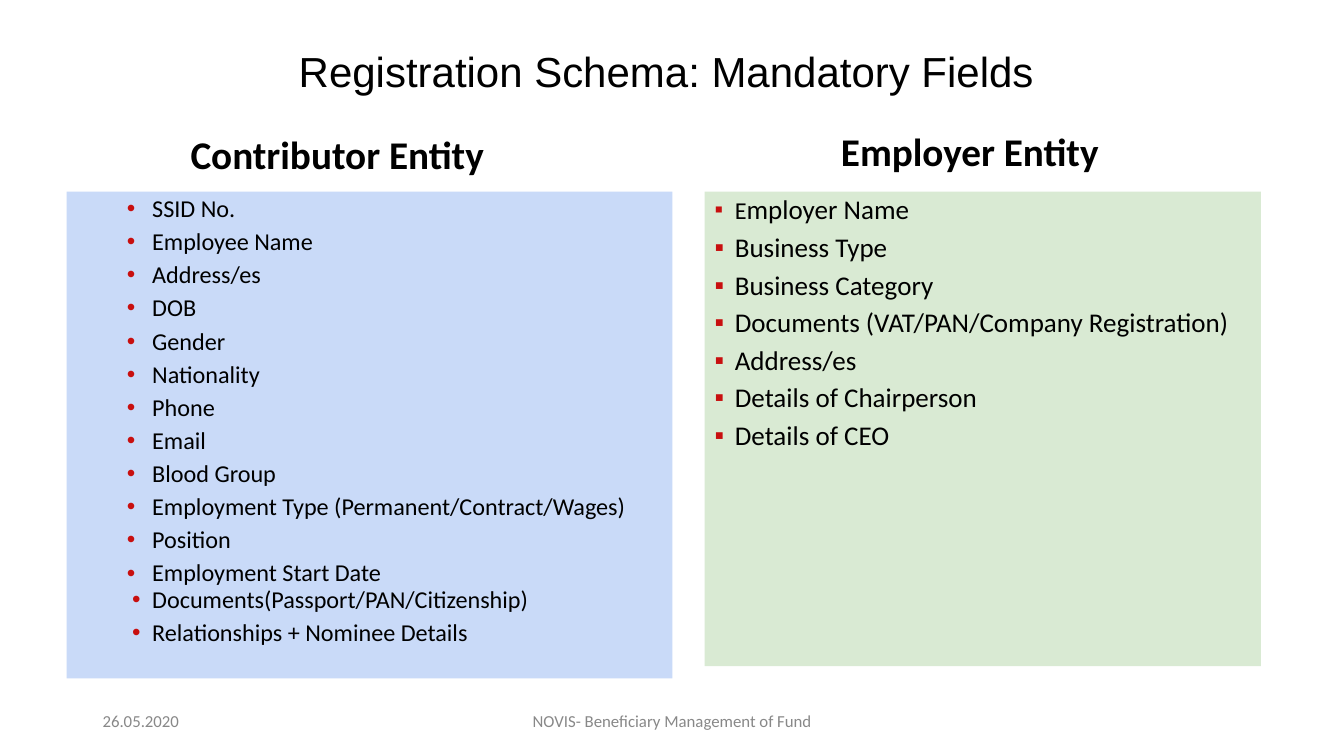
from dataclasses import dataclass

from lxml import etree
from pptx import Presentation
from pptx import util as u
from pptx.dml.color import RGBColor
from pptx.enum import text
from pptx.oxml import ns

COLOURS = {
    "ink": "000000",
    "muted": "888888",
    "bullet": "C80F0F",
    "contributor": "C9DAF8",
    "employer": "D9EAD3",
}
LEFT, CENTRE = text.PP_ALIGN.LEFT, text.PP_ALIGN.CENTER
TOP, MIDDLE, BOTTOM = text.MSO_ANCHOR.TOP, text.MSO_ANCHOR.MIDDLE, text.MSO_ANCHOR.BOTTOM
PADDING = (7.2, 3.6, 7.2, 3.6)


@dataclass
class Label:
    words: str
    bounds: tuple[float, float, float, float]
    size: float
    align: int = LEFT
    anchor: int = MIDDLE
    font: str = "Calibri"
    colour: str = "ink"
    bold: bool = False
    spacing: float = 0.9
    padding: tuple[float, float, float, float] = PADDING
    placeholder: int | None = None


@dataclass
class Item:
    spans: list[tuple[str, float]]
    before: float
    hanging: float


@dataclass
class FieldList:
    placeholder: int
    bounds: tuple[float, float, float, float]
    fill: str
    bullet: str
    margin: float
    items: list[Item]


def place(box, bounds, anchor, padding) -> None:
    box.left, box.top, box.width, box.height = (u.Pt(length) for length in bounds)
    frame = box.text_frame
    frame.word_wrap = True
    frame.auto_size = text.MSO_AUTO_SIZE.NONE
    frame.vertical_anchor = anchor
    frame.margin_left, frame.margin_top, frame.margin_right, frame.margin_bottom = (
        u.Pt(length) for length in padding
    )


def write(para, words: str, *, size: float, font: str = "Calibri", colour: str = "ink",
          bold: bool = False, align: int = LEFT, spacing: float = 0.9, before: float = 0) -> None:
    para.alignment = align
    para.line_spacing = spacing
    para.space_before = u.Pt(before)
    para.space_after = u.Pt(0)
    span = para.add_run()
    span.text = words
    span.font.size = u.Pt(size)
    span.font.name = font
    span.font.bold = bold
    span.font.color.rgb = RGBColor.from_string(COLOURS[colour])


def add_bullet(para, symbol: str, margin: float, hanging: float) -> None:
    properties = para._p.get_or_add_pPr()
    properties.set("marL", str(u.Pt(margin)))
    properties.set("indent", str(-u.Pt(hanging)))
    colour = etree.SubElement(properties, ns.qn("a:buClr"))
    etree.SubElement(colour, ns.qn("a:srgbClr"), val=COLOURS["bullet"])
    etree.SubElement(properties, ns.qn("a:buFont"), typeface="Arial")
    etree.SubElement(properties, ns.qn("a:buChar"), char=symbol)


def draw_label(page, label: Label) -> None:
    if label.placeholder is None:
        box = page.shapes.add_textbox(0, 0, 0, 0)
    else:
        box = page.placeholders[label.placeholder]
    place(box, label.bounds, label.anchor, label.padding)
    write(box.text_frame.paragraphs[0], label.words, size=label.size, font=label.font,
          colour=label.colour, bold=label.bold, align=label.align, spacing=label.spacing)


def draw_list(page, fields: FieldList) -> None:
    box = page.placeholders[fields.placeholder]
    place(box, fields.bounds, TOP, PADDING)
    box.fill.solid()
    box.fill.fore_color.rgb = RGBColor.from_string(COLOURS[fields.fill])
    frame = box.text_frame
    for index, item in enumerate(fields.items):
        para = frame.add_paragraph() if index else frame.paragraphs[0]
        para.level = 1
        for words, size in item.spans:
            write(para, words, size=size, before=item.before)
        add_bullet(para, fields.bullet, fields.margin, item.hanging)


PERSONAL = ["SSID No.", "Employee Name", "Address/es", "DOB", "Gender", "Nationality",
            "Phone", "Email", "Blood Group", "Employment Type (Permanent/Contract/Wages)",
            "Position", "Employment Start Date"]
RECORDS = ["Documents(Passport/PAN/Citizenship)", "Relationships + Nominee Details"]
COMPANY = ["Business Type", "Business Category", "Documents (VAT/PAN/Company Registration)",
           "Address/es", "Details of Chairperson", "Details of CEO"]

CONTRIBUTOR_ITEMS = [
    Item([(words, 17.3)], 5 if index else 0, hanging)
    for group, hanging in ((PERSONAL, 18), (RECORDS, 14.4))
    for index, words in enumerate(group)
]
EMPLOYER_ITEMS = [Item([("E", 17.3), ("mployer Name", 19.3)], 0, 14.4)]
EMPLOYER_ITEMS += [Item([(words, 19.3)], 6, 14.4) for words in COMPANY]

LISTS = [
    FieldList(2, (47.5, 136.8, 432.7, 347.8), "contributor", "•", 54, CONTRIBUTOR_ITEMS),
    FieldList(4, (503.3, 136.8, 397.4, 339.1), "employer", "▪", 14.4, EMPLOYER_ITEMS),
]
LABELS = [
    Label("Registration Schema: Mandatory Fields ", (66.2, 28.8, 828, 48.2), 30, CENTRE,
          font="Arial", placeholder=0),
    Label("Contributor Entity", (128.9, 90, 351.4, 43.9), 28, bold=True, placeholder=1),
    Label("Employer Entity", (538.6, 88.6, 315.4, 36.7), 28, CENTRE, BOTTOM, bold=True,
          padding=(0, 0, 7.2, 0), placeholder=3),
    Label("26.05.2020", (66.2, 500.4, 216, 28.8), 12, colour="muted", spacing=1),
    Label("NOVIS- Beneficiary Management of Fund", (318.2, 500.4, 324, 28.8), 12, CENTRE,
          colour="muted", spacing=1),
]


def main() -> None:
    deck = Presentation()
    deck.slide_width, deck.slide_height = u.Pt(960), u.Pt(540)
    page = deck.slides.add_slide(deck.slide_layouts.get_by_name("Comparison"))
    for fields in LISTS:
        draw_list(page, fields)
    for label in LABELS:
        draw_label(page, label)
    deck.save("out.pptx")


if __name__ == "__main__":
    main()
